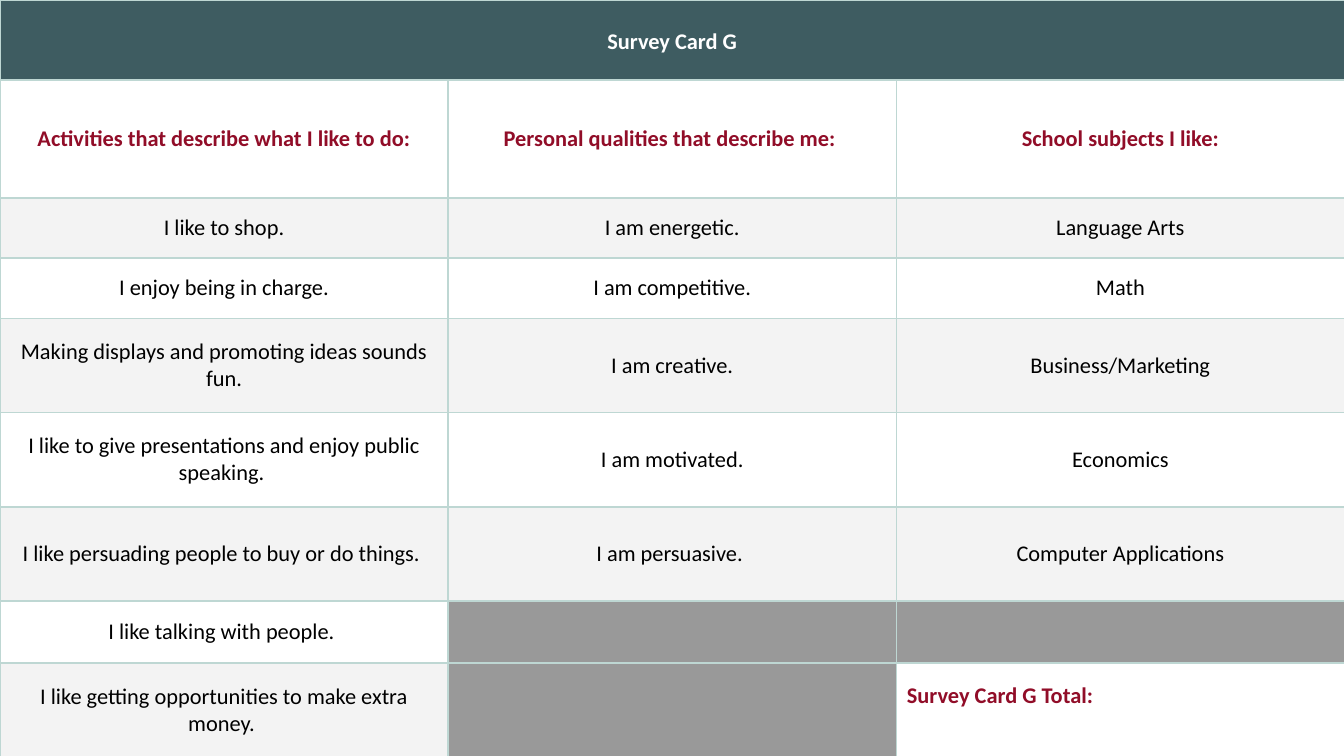
from lxml.etree import SubElement
from pptx import Presentation
from pptx.dml.color import RGBColor
from pptx.enum.text import MSO_ANCHOR, PP_ALIGN
from pptx.oxml.ns import qn
from pptx.util import Cm, Pt

COLORS = {
    "title_fill": "3E5C61",
    "title_text": "FFFFFF",
    "heading": "910D28",
    "text": "000000",
    "band": "F3F3F3",
    "plain": "FFFFFF",
    "unused": "999999",
    "border": "BED7D3",
}
ROW_HEIGHTS = [1.51, 2.23, 1.14, 1.14, 1.78, 1.78, 1.78, 1.14, 1.78]
ROWS = [
    ["Survey Card G", "", ""],
    ["Activities that describe what I like to do:",
     "Personal qualities that describe me: ", "School subjects I like:"],
    ["I like to shop.", "I am energetic.", "Language Arts"],
    ["I enjoy being in charge.", "I am competitive.", "Math"],
    ["Making displays and promoting ideas sounds fun.",
     "I am creative.", "Business/Marketing"],
    ["I like to give presentations and enjoy public speaking. ",
     "I am motivated.", "Economics"],
    ["I like persuading people to buy or do things. ",
     "I am persuasive. ", "Computer Applications"],
    ["I like talking with people. ", "", ""],
    ["I like getting opportunities to make extra money. ",
     "", "Survey Card G Total:"],
]
CELL_FORMAT = {
    "vertical_anchor": MSO_ANCHOR.MIDDLE,
    "margin_left": Cm(0.2),
    "margin_right": Cm(0.2),
    "margin_top": Cm(0.2),
    "margin_bottom": Cm(0.2),
}


def add_borders(cell):
    properties = cell._tc.get_or_add_tcPr()
    for position, side in enumerate(("a:lnL", "a:lnR", "a:lnT", "a:lnB")):
        line = SubElement(properties, qn(side), w=str(Pt(1)))
        fill = SubElement(line, qn("a:solidFill"))
        SubElement(fill, qn("a:srgbClr"), val=COLORS["border"])
        properties.insert(position, line)


presentation = Presentation()
presentation.slide_width = Cm(25.4)
presentation.slide_height = Cm(14.29)
slide = presentation.slides.add_slide(presentation.slide_layouts[6])

table = slide.shapes.add_table(
    len(ROWS), 3, 0, 0, Cm(25.4), Cm(sum(ROW_HEIGHTS))).table
for column in table.columns:
    column.width = Cm(8.47)
for row, height in zip(table.rows, ROW_HEIGHTS):
    row.height = Cm(height)
table.cell(0, 0).merge(table.cell(0, 2))

for row_index, texts in enumerate(ROWS):
    for column_index, text in enumerate(texts):
        cell = table.cell(row_index, column_index)
        is_title = row_index == 0
        is_total = text.endswith("Total:")
        is_heading = row_index == 1 or is_total

        if is_title:
            fill = "title_fill"
        elif not text:
            fill = "unused"
        elif row_index % 2 == 0 and not is_total:
            fill = "band"
        else:
            fill = "plain"
        cell.fill.solid()
        cell.fill.fore_color.rgb = RGBColor.from_string(COLORS[fill])
        add_borders(cell)
        for name, value in CELL_FORMAT.items():
            setattr(cell, name, value)
        if not text:
            continue

        paragraph = cell.text_frame.paragraphs[0]
        paragraph.alignment = PP_ALIGN.LEFT if is_total else PP_ALIGN.CENTER
        if is_title:
            paragraph.line_spacing = 1.15
            paragraph.space_after = Pt(6)
        if is_heading:
            paragraph.space_before = Pt(10)
        if is_total:
            cell.margin_bottom = Cm(0.74)  # lifts the label, leaving room to write

        run = paragraph.add_run()
        run.text = text
        color = "title_text" if is_title else "heading" if is_heading else "text"
        font_format = {"name": "Calibri", "size": Pt(12),
                       "bold": is_title or is_heading}
        for name, value in font_format.items():
            setattr(run.font, name, value)
        run.font.color.rgb = RGBColor.from_string(COLORS[color])

presentation.save("out.pptx")
